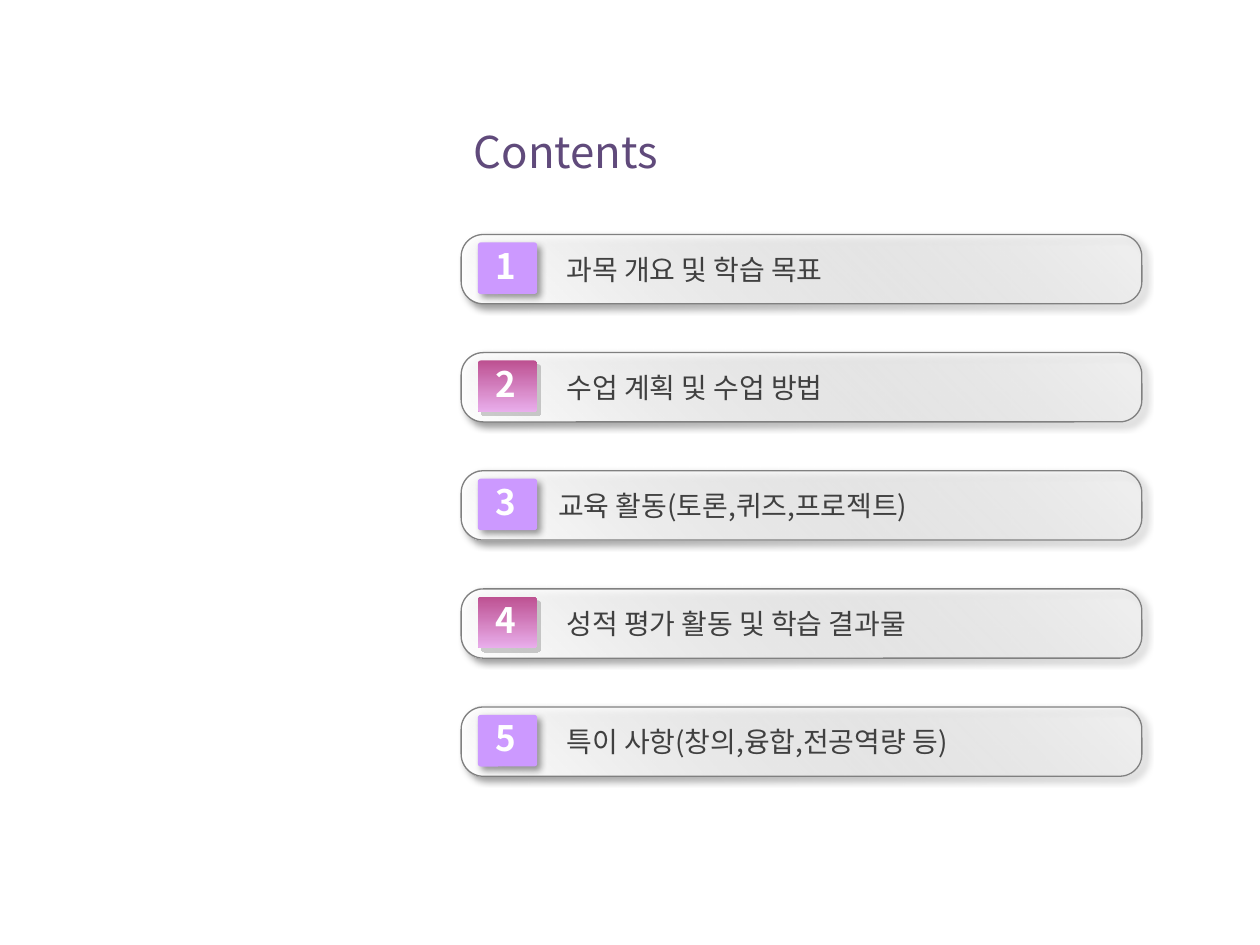
"""Build a contents slide with five numbered bars."""
from dataclasses import dataclass
from lxml.etree import SubElement
from pptx import Presentation
from pptx.dml.color import RGBColor as RGB
from pptx.enum.shapes import MSO_SHAPE as SHAPE
from pptx.enum.text import MSO_ANCHOR as ANCHOR, MSO_AUTO_SIZE as AUTO, PP_ALIGN as ALIGN
from pptx.oxml.ns import qn
from pptx.util import Pt


@dataclass(frozen=True)
class Theme:
    font: str = "Noto Sans CJK KR"
    title: str = "604A7B"
    text: str = "404040"
    white: str = "FFFFFF"
    outline: str = "808080"
    lilac: str = "CC99FF"
    pink_top: str = "BD5191"
    pink_bottom: str = "E9AEEC"
    shadow: str = "000000"
    flat_shadow: str = "808080"
    title_size: int = 25
    label_size: int = 16
    number_size: int = 20


T = Theme()


def write(sp, text, size, color, bold=False):
    tf = sp.text_frame
    tf.vertical_anchor = ANCHOR.TOP
    tf.auto_size = AUTO.SHAPE_TO_FIT_TEXT
    p = tf.paragraphs[0]
    p.text = text
    p.alignment = ALIGN.LEFT
    f = p.font
    f.name, f.size, f.bold = T.font, Pt(size), bold
    f.color.rgb = RGB.from_string(color)
    SubElement(f._rPr, qn("a:ea"), typeface=T.font)
    return tf


def panel(shapes, box, radius, colors, angle, shadow, blur):
    sp = shapes.add_shape(SHAPE.ROUNDED_RECTANGLE, *map(Pt, box))
    sp.adjustments[0] = radius
    if len(colors) == 1:
        sp.fill.solid()
        sp.fill.fore_color.rgb = RGB.from_string(colors[0])
    else:
        sp.fill.gradient()
        sp.fill.gradient_angle = angle
        for stop, color in zip(sp.fill.gradient_stops, colors):
            stop.color.rgb = RGB.from_string(color)
    sp.line.fill.background()
    sp.shadow.inherit = False
    effects = sp._element.spPr.find(qn("a:effectLst"))
    outer = SubElement(effects, qn("a:outerShdw"), blurRad=str(Pt(blur)), dist=str(Pt(3)),
                       dir="2700000", algn="tl", rotWithShape="0")
    tint = SubElement(outer, qn("a:srgbClr"), val=shadow)
    SubElement(tint, qn("a:alpha"), val="40000")
    return sp


prs = Presentation()
prs.slide_width, prs.slide_height = Pt(720), Pt(540)
s = prs.slides.add_slide(prs.slide_layouts[5])

title = s.shapes.title
title.left, title.top, title.width, title.height = map(Pt, (263.5, 67.5, 124, 37.5))
write(title, "Contents", T.title_size, T.title).word_wrap = False

items = [
    ("과목 개요 및 학습 목표", 4.5),
    ("수업 계획 및 수업 방법", 4.5),
    ("교육 활동(토론,퀴즈,프로젝트)", 0),
    ("성적 평가 활동 및 학습 결과물", 4.5),
    ("특이 사항(창의,융합,전공역량 등)", 4.5),
]
badges = [
    ((T.lilac,), T.shadow, 4),
    ((T.pink_top, T.pink_bottom), T.flat_shadow, 0),
]

for i, (label, indent) in enumerate(items):
    top = 134 + 67.5 * i
    row = s.shapes.add_group_shape().shapes

    bar = panel(row, (263.5, top, 389, 39.6), 0.32, (T.white, T.white), 45, T.shadow, 4)
    bar.line.color.rgb = RGB.from_string(T.outline)
    bar.line.width = Pt(0.75)
    end = bar.fill.gradient_stops[1]
    end.position = 0.95
    SubElement(bar._element.spPr.findall(".//" + qn("a:gs"))[1][0], qn("a:alpha"), val="20000")

    colors, shadow, blur = badges[i % 2]
    panel(row, (273, top + 4.5, 34, 29.5), 0.06, colors, 270, shadow, blur)

    tb = row.add_textbox(*map(Pt, (312, top + 6.5, 296.5, 26.5)))
    tf = write(tb, label, T.label_size, T.text)
    tf.word_wrap = True
    tf.margin_left = Pt(7.2 + indent)

    tb = row.add_textbox(*map(Pt, (276, top + 2, 28, 28)))
    write(tb, str(i + 1), T.number_size, T.white, True).word_wrap = True

prs.save("out.pptx")
